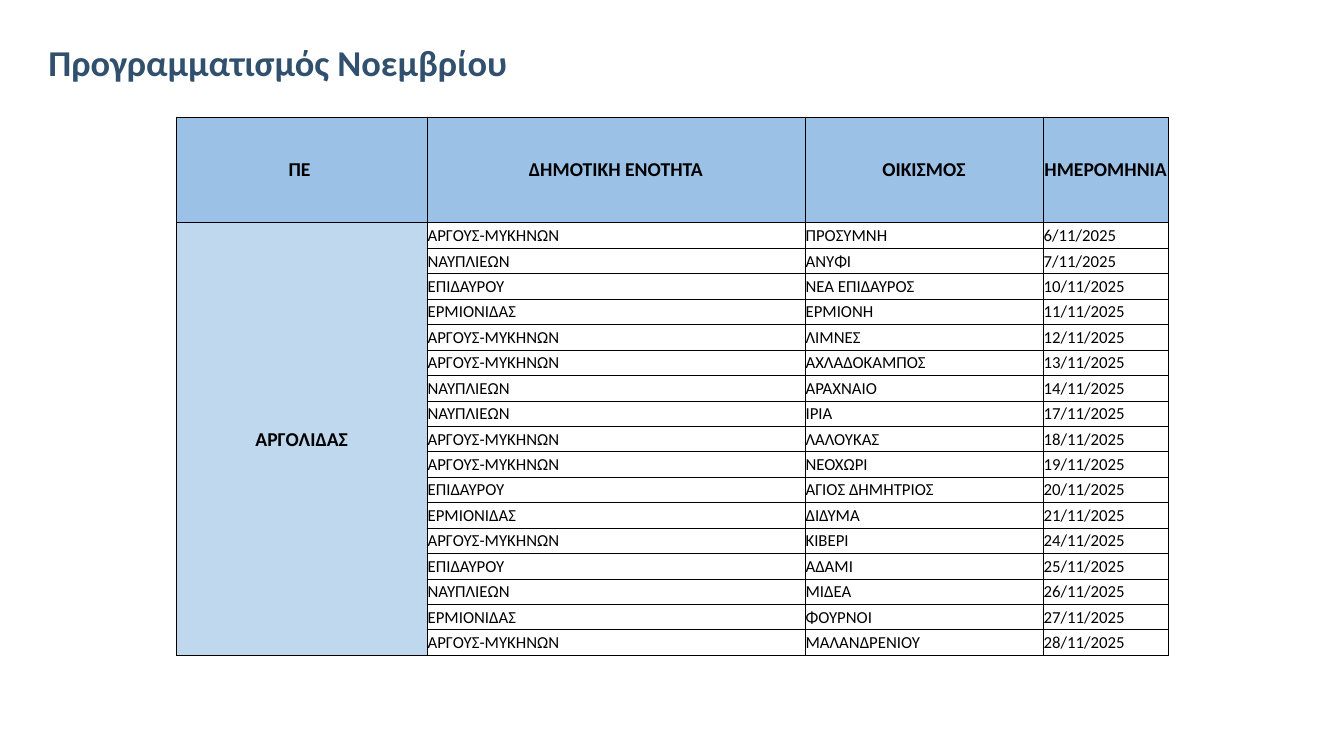
from dataclasses import dataclass
from itertools import product

from lxml.etree import SubElement
from pptx import Presentation
from pptx.dml.color import RGBColor
from pptx.enum.text import MSO_ANCHOR as Anchor, MSO_AUTO_SIZE as AutoSize, PP_ALIGN as Align
from pptx.oxml.ns import qn
from pptx.slide import Slide
from pptx.table import Table, _Cell as Cell
from pptx.text.text import TextFrame
from pptx.util import Inches, Pt

WIDTH, HEIGHT = Inches(13.333), Inches(7.5)
FONT = "Calibri"
NAVY = RGBColor(0x31, 0x50, 0x6D)
BLACK = RGBColor(0x00, 0x00, 0x00)
HEADER_BLUE = RGBColor(0x9B, 0xC2, 0xE6)
REGION_BLUE = RGBColor(0xC0, 0xD8, 0xED)
TABLE_LEFT, TABLE_TOP = WIDTH * 0.1313, HEIGHT * 0.1547
HEADER_HEIGHT, ROW_HEIGHT = HEIGHT * 0.14, HEIGHT * 0.03365


@dataclass(frozen=True)
class Column:
    heading: str
    share: float


@dataclass(frozen=True)
class Visit:
    municipality: str
    settlement: str
    day: int

    def values(self) -> tuple[str, str, str]:
        return self.municipality, self.settlement, f"{self.day}/11/2025"


TITLE = "Προγραμματισμός Νοεμβρίου"
REGION = "ΑΡΓΟΛΙΔΑΣ"
COLUMNS = (
    Column("ΠΕ ", 0.1864),
    Column("ΔΗΜΟΤΙΚΗ ΕΝΟΤΗΤΑ", 0.2812),
    Column("ΟΙΚΙΣΜΟΣ", 0.1772),
    Column("ΗΜΕΡΟΜΗΝΙΑ", 0.0932),
)
ARGOS, NAFPLIO = "ΑΡΓΟΥΣ-ΜΥΚΗΝΩΝ", "ΝΑΥΠΛΙΕΩΝ"
EPIDAVROS, ERMIONIDA = "ΕΠΙΔΑΥΡΟΥ", "ΕΡΜΙΟΝΙΔΑΣ"
VISITS = (
    Visit(ARGOS, "ΠΡΟΣΥΜΝΗ", 6),
    Visit(NAFPLIO, "ΑΝΥΦΙ", 7),
    Visit(EPIDAVROS, "ΝΕΑ ΕΠΙΔΑΥΡΟΣ", 10),
    Visit(ERMIONIDA, "ΕΡΜΙΟΝΗ", 11),
    Visit(ARGOS, "ΛΙΜΝΕΣ", 12),
    Visit(ARGOS, "ΑΧΛΑΔΟΚΑΜΠΟΣ", 13),
    Visit(NAFPLIO, "ΑΡΑΧΝΑΙΟ", 14),
    Visit(NAFPLIO, "ΙΡΙΑ", 17),
    Visit(ARGOS, "ΛΑΛΟΥΚΑΣ", 18),
    Visit(ARGOS, "ΝΕΟΧΩΡΙ", 19),
    Visit(EPIDAVROS, "ΑΓΙΟΣ ΔΗΜΗΤΡΙΟΣ", 20),
    Visit(ERMIONIDA, "ΔΙΔΥΜΑ", 21),
    Visit(ARGOS, "ΚΙΒΕΡΙ", 24),
    Visit(EPIDAVROS, "ΑΔΑΜΙ", 25),
    Visit(NAFPLIO, "ΜΙΔΕΑ", 26),
    Visit(ERMIONIDA, "ΦΟΥΡΝΟΙ", 27),
    Visit(ARGOS, "ΜΑΛΑΝΔΡΕΝΙΟΥ", 28),
)


def write(frame: TextFrame, text: str, *, size: float = 12, bold: bool = False,
          color: RGBColor = BLACK, align: Align = Align.LEFT, spacing: float = 1.0) -> None:
    """Write one formatted paragraph into a text frame."""
    para = frame.paragraphs[0]
    para.alignment, para.line_spacing = align, spacing
    span = para.add_run()
    span.text = text
    span.font.name, span.font.size, span.font.bold = FONT, Pt(size), bold
    span.font.color.rgb = color


def outline(cell: Cell) -> None:
    """Draw a thin black border on all four sides of a cell."""
    properties = cell._tc.get_or_add_tcPr()
    for side in ("a:lnL", "a:lnR", "a:lnT", "a:lnB"):
        line = SubElement(properties, qn(side), w=str(Pt(0.5)))
        fill = SubElement(line, qn("a:solidFill"))
        SubElement(fill, qn("a:srgbClr"), val=str(BLACK))


def style_cell(cell: Cell) -> None:
    """Give a cell its border, anchor, narrow margins and empty fill."""
    outline(cell)
    cell.vertical_anchor = Anchor.MIDDLE
    cell.margin_left = cell.margin_right = cell.margin_top = Pt(0.5)
    cell.margin_bottom = 0
    cell.fill.background()


def label(cell: Cell, text: str, fill: RGBColor) -> None:
    """Fill a cell and write a centred bold label in it."""
    cell.fill.solid()
    cell.fill.fore_color.rgb = fill
    write(cell.text_frame, text, size=14, bold=True, align=Align.CENTER)


def add_title(page: Slide) -> None:
    """Place and format the slide title."""
    box = page.shapes.title
    box.left, box.top = int(WIDTH * 0.027), int(HEIGHT * 0.0333)
    box.width, box.height = int(WIDTH * 0.93), int(HEIGHT * 0.0853)
    frame = box.text_frame
    frame.word_wrap, frame.auto_size = True, AutoSize.NONE
    frame.vertical_anchor = Anchor.BOTTOM
    frame.margin_left, frame.margin_right = Inches(0.12), Inches(0.1)
    frame.margin_top = frame.margin_bottom = Inches(0.05)
    write(frame, TITLE, size=26, bold=True, color=NAVY, spacing=0.9)


def add_grid(page: Slide) -> Table:
    """Add the empty, styled schedule table."""
    width = WIDTH * sum(column.share for column in COLUMNS)
    height = HEADER_HEIGHT + ROW_HEIGHT * len(VISITS)
    row_count = len(VISITS) + 1
    table = page.shapes.add_table(row_count, len(COLUMNS), int(TABLE_LEFT), int(TABLE_TOP),
                                  int(width), int(height)).table
    table.first_row = table.horz_banding = False
    for column, spec_column in zip(table.columns, COLUMNS):
        column.width = int(WIDTH * spec_column.share)
    for index, row in enumerate(table.rows):
        row.height = int(ROW_HEIGHT if index else HEADER_HEIGHT)
    for row_index, column_index in product(range(row_count), range(len(COLUMNS))):
        style_cell(table.cell(row_index, column_index))
    return table


def fill_schedule(table: Table) -> None:
    """Write the headings, the region and the visits."""
    for index, column in enumerate(COLUMNS):
        label(table.cell(0, index), column.heading, HEADER_BLUE)
    table.cell(1, 0).merge(table.cell(len(VISITS), 0))
    label(table.cell(1, 0), REGION, REGION_BLUE)
    for row_index, visit in enumerate(VISITS, start=1):
        for column_index, value in enumerate(visit.values(), start=1):
            write(table.cell(row_index, column_index).text_frame, value)


def main() -> None:
    """Build and save the schedule slide."""
    deck = Presentation()
    deck.slide_width, deck.slide_height = WIDTH, HEIGHT
    page = deck.slides.add_slide(deck.slide_layouts.get_by_name("Title Only"))
    add_title(page)
    fill_schedule(add_grid(page))
    deck.save("out.pptx")


if __name__ == "__main__":
    main()
